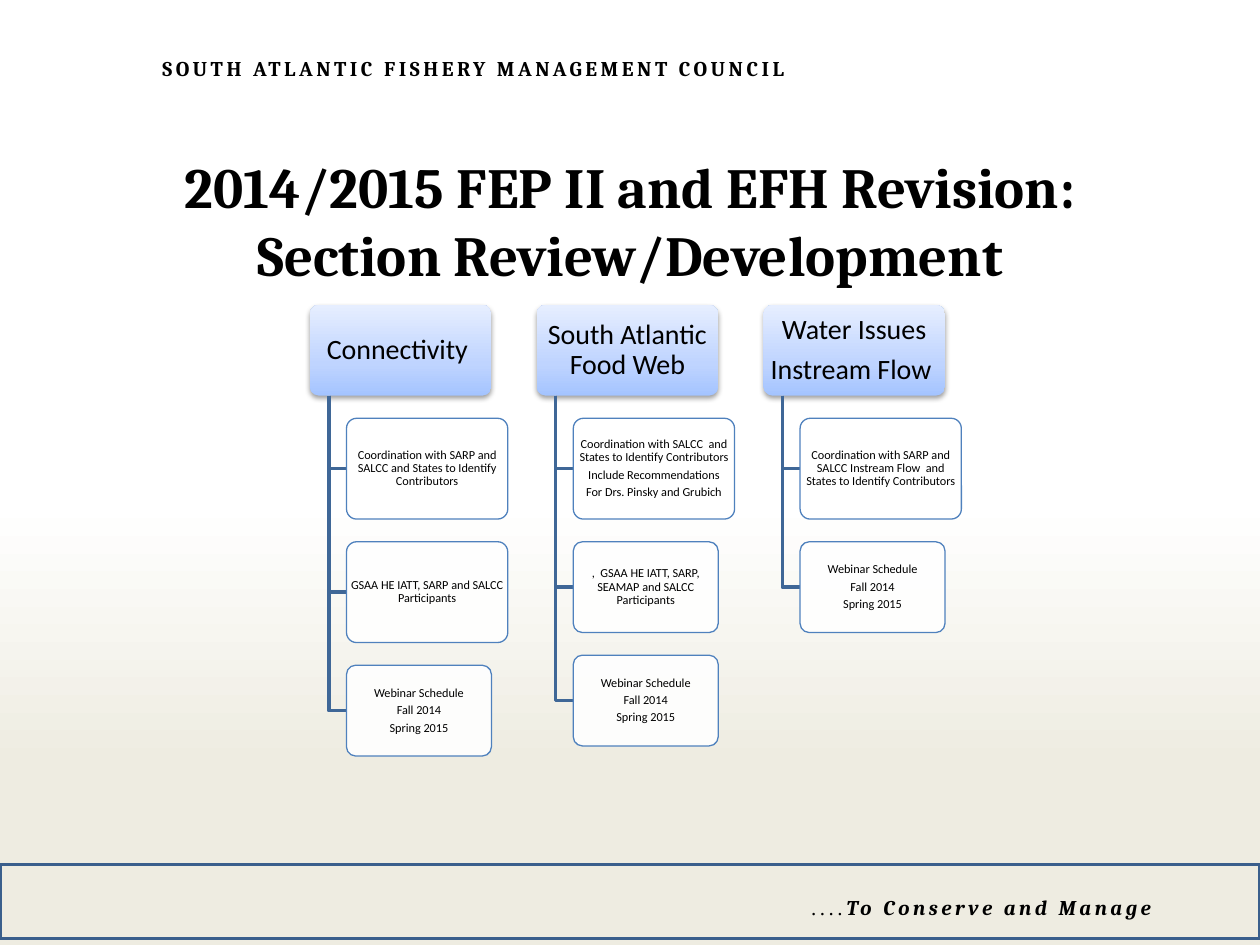
from copy import deepcopy
from dataclasses import dataclass

from pptx import Presentation
from pptx.dml.color import RGBColor
from pptx.enum.shapes import MSO_SHAPE as Shape
from pptx.enum.text import MSO_ANCHOR as Anchor, MSO_AUTO_SIZE as AutoSize, PP_ALIGN as Align
from pptx.oxml import parse_xml
from pptx.oxml.ns import nsdecls, qn
from pptx.util import Inches, Pt


@dataclass(frozen=True)
class Theme:
    text: str = "000000"
    child_fill: str = "FFFFFF"
    child_line: str = "4F81BD"
    elbow: str = "3F6797"
    band_line: str = "3A5F8C"
    background: tuple = ((0.53, "FFFFFF"), (0.81, "EEECE1"))
    header: tuple = ((0, "A4C4FF"), (0.35, "BFD4FF"), (1, "E6EEFF"))
    serif: str = "Cambria"
    sans: str = "Calibri"
    plain: str = "Times New Roman"
    title_size: float = 32.4
    header_size: float = 16
    banner_size: float = 12
    child_size: float = 7


SHADOW = """<a:effectLst %s><a:outerShdw blurRad="%d" dist="%d" dir="5400000"
 rotWithShape="0"><a:srgbClr val="000000"><a:alpha val="38000"/></a:srgbClr>
 </a:outerShdw></a:effectLst>""" % (nsdecls("a"), Pt(3.1), Pt(1.6))


class SlideBuilder:
    def __init__(self, slide, theme):
        self.slide, self.theme = slide, theme

    def format_font(self, font, **values):
        font.color.rgb = RGBColor.from_string(self.theme.text)
        for name, value in values.items():
            setattr(font, name, value)

    def paint_gradient(self, fill, stops, angle, properties=None):
        """Fill with stops; properties is the spPr that receives any stops past two."""
        fill.gradient()
        fill.gradient_angle = angle
        for _ in stops[2:]:
            stop_list = properties.find(qn("a:gradFill")).find(qn("a:gsLst"))
            stop_list.append(deepcopy(stop_list[-1]))
        for stop, (position, color) in zip(fill.gradient_stops, stops):
            stop.position = position
            stop.color.rgb = RGBColor.from_string(color)

    def background(self):
        self.paint_gradient(self.slide.background.fill, self.theme.background, 270)

    def outline(self, shape, color, width):
        shape.line.color.rgb = RGBColor.from_string(color)
        shape.line.width = Pt(width)

    def title(self, text, left, top, width, height):
        shape = self.slide.shapes.title
        shape.left, shape.top = Inches(left), Inches(top)
        shape.width, shape.height = Inches(width), Inches(height)
        frame = shape.text_frame
        frame.text = text
        frame.auto_size = AutoSize.NONE
        frame.vertical_anchor = Anchor.MIDDLE
        paragraph = frame.paragraphs[0]
        paragraph.alignment = Align.CENTER
        self.format_font(paragraph.runs[0].font, name=self.theme.serif,
                         size=Pt(self.theme.title_size), bold=True)

    def banner(self, runs, left, top, width, height):
        """Add one line of letterspaced text from (text, font values) pairs."""
        box = self.slide.shapes.add_textbox(*map(Inches, (left, top, width, height)))
        box.text_frame.word_wrap = True
        for text, values in runs:
            run = box.text_frame.paragraphs[0].add_run()
            run.text = text
            self.format_font(run.font, size=Pt(self.theme.banner_size), **values)
            run.font._element.set("spc", "200")

    def band(self, left, top, width, height):
        shape = self.slide.shapes.add_shape(
            Shape.RECTANGLE, *map(Inches, (left, top, width, height)))
        shape.shadow.inherit = False
        shape.fill.background()
        self.outline(shape, self.theme.band_line, 2)

    def rounded_box(self, lines, size, inset, left, top, width, height):
        shape = self.slide.shapes.add_shape(
            Shape.ROUNDED_RECTANGLE, *map(Inches, (left, top, width, height)))
        shape.adjustments[0] = 0.1
        shape.shadow.inherit = False
        frame = shape.text_frame
        frame.word_wrap = True
        frame.vertical_anchor = Anchor.MIDDLE
        frame.margin_left = frame.margin_right = Inches(inset)
        frame.margin_top = frame.margin_bottom = Inches(min(inset, 0.02))
        frame.text = "\n".join(lines)
        for paragraph in frame.paragraphs:
            paragraph.alignment = Align.CENTER
            paragraph.line_spacing = 0.9
            paragraph.space_after = Pt(0.35 * size)
            self.format_font(paragraph.runs[0].font, name=self.theme.sans, size=Pt(size))
        return shape

    def header(self, lines, *place):
        shape = self.rounded_box(lines, self.theme.header_size, 0.03, *place)
        properties = shape._element.spPr
        self.paint_gradient(shape.fill, self.theme.header, 90, properties)
        shape.line.fill.background()
        properties.replace(properties.find(qn("a:effectLst")), parse_xml(SHADOW))

    def child(self, lines, *place):
        shape = self.rounded_box(lines, self.theme.child_size, 0.01, *place)
        shape.fill.solid()
        shape.fill.fore_color.rgb = RGBColor.from_string(self.theme.child_fill)
        color = shape._element.spPr.find(qn("a:solidFill"))[0]
        color.append(parse_xml('<a:alpha %s val="90000"/>' % nsdecls("a")))
        self.outline(shape, self.theme.child_line, 0.75)

    def elbow(self, left, top, right, bottom):
        builder = self.slide.shapes.build_freeform(Inches(left), Inches(top))
        corners = [(Inches(left), Inches(bottom)), (Inches(right), Inches(bottom))]
        builder.add_line_segments(corners, close=False)
        shape = builder.convert_to_shape()
        shape.shadow.inherit = False
        shape.fill.background()
        self.outline(shape, self.theme.elbow, 2)


LARGE, SMALL = (1.28, 0.8), (1.15, 0.72)
HEADER_WIDTH, HEADER_HEIGHT = 1.44, 0.72
TREE_LEFT, TREE_TOP, COLUMN_PITCH = 2.46, 2.42, 1.8
ELBOW_INDENT, CHILD_INDENT, CHILD_GAP = 0.15, 0.29, 0.18

WEBINAR = (["Webinar Schedule", "Fall 2014", "Spring 2015"], SMALL)
COLUMNS = [
    (["Connectivity "], [
        (["Coordination with SARP and SALCC and States to Identify Contributors"], LARGE),
        (["GSAA HE IATT, SARP and SALCC Participants"], LARGE),
        WEBINAR]),
    (["South Atlantic Food Web"], [
        (["Coordination with SALCC  and States to Identify Contributors",
          "Include Recommendations", "For Drs. Pinsky and Grubich"], LARGE),
        ([",  GSAA HE IATT, SARP, SEAMAP and SALCC Participants"], SMALL),
        WEBINAR]),
    (["Water Issues", "Instream Flow "], [
        (["Coordination with SARP and SALCC Instream Flow  and "
          "States to Identify Contributors"], LARGE),
        WEBINAR]),
]


def add_tree(builder):
    header_bottom = TREE_TOP + HEADER_HEIGHT
    for index, (heading, children) in enumerate(COLUMNS):
        left = TREE_LEFT + index * COLUMN_PITCH
        builder.header(heading, left, TREE_TOP, HEADER_WIDTH, HEADER_HEIGHT)
        child_left = left + CHILD_INDENT
        top = header_bottom + CHILD_GAP
        for lines, (width, height) in children:
            builder.elbow(left + ELBOW_INDENT, header_bottom, child_left, top + height / 2)
            builder.child(lines, child_left, top, width, height)
            top += height + CHILD_GAP


def main():
    presentation = Presentation()
    presentation.slide_width, presentation.slide_height = Inches(10), Inches(7.5)
    slide = presentation.slides.add_slide(presentation.slide_layouts[5])
    theme = Theme()
    builder = SlideBuilder(slide, theme)
    builder.background()
    builder.title("2014/2015 FEP II and EFH Revision: Section Review/Development",
                  0.75, 1.08, 8.5, 1.33)
    strong = {"name": theme.serif, "bold": True}
    builder.banner([("SOUTH ATLANTIC FISHERY MANAGEMENT COUNCIL", strong)],
                   1.19, 0.39, 8.81, 0.3)
    builder.banner([("....", {"name": theme.plain}),
                    ("To Conserve and Manage", {**strong, "italic": True})],
                   6.34, 7.05, 3.66, 0.3)
    builder.band(0, 6.86, 10, 0.59)
    add_tree(builder)
    presentation.save("out.pptx")


if __name__ == "__main__":
    main()
